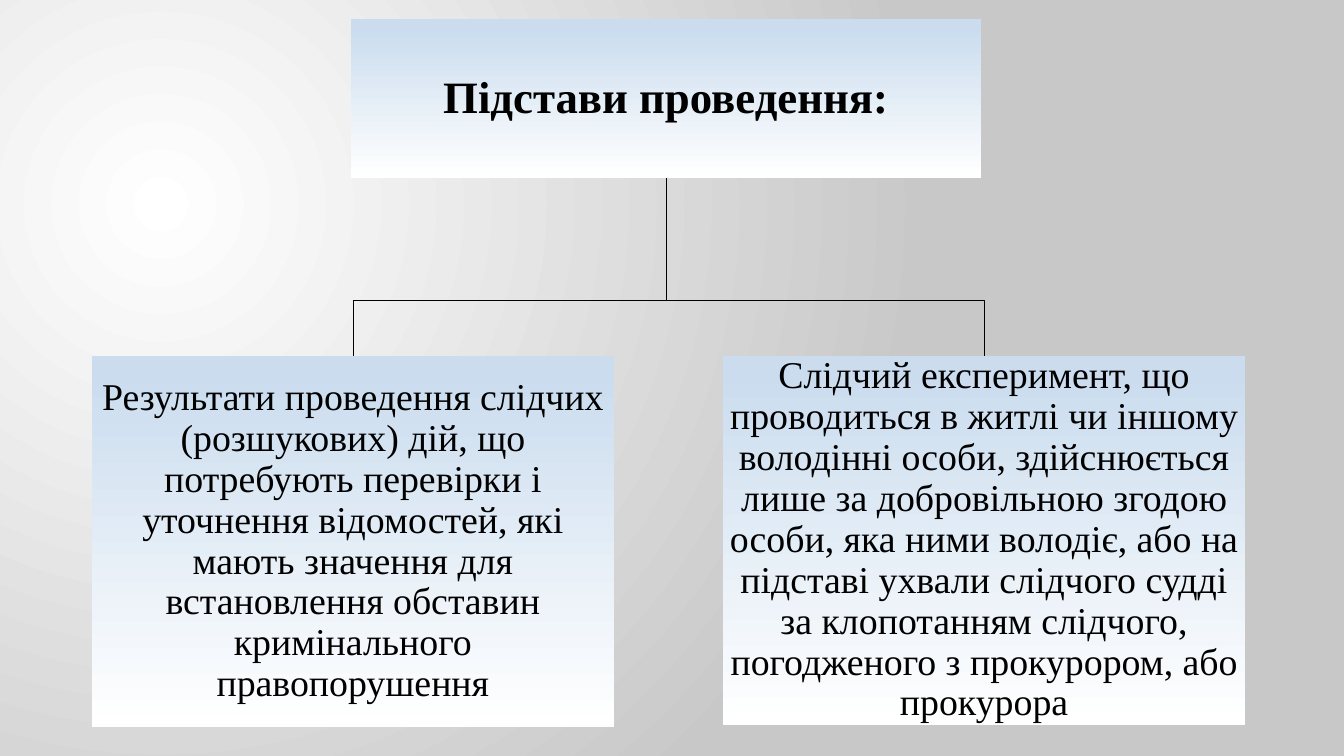
import pptx
import pptx.dml.color
import pptx.enum.shapes
import pptx.enum.text
import pptx.oxml
import pptx.oxml.ns
import pptx.util

Inches = pptx.util.Inches
RGBColor = pptx.dml.color.RGBColor

BLACK = RGBColor(0, 0, 0)
WHITE = RGBColor(255, 255, 255)
GREY = RGBColor(0xC8, 0xC8, 0xC8)
PALE_BLUE = RGBColor(0xCA, 0xDC, 0xEE)
FONT = "Times New Roman"

HEADING = "Підстави проведення:"
GROUNDS = [
    ("Результати проведення слідчих (розшукових) дій, що потребують перевірки "
     "і уточнення відомостей, які мають значення для встановлення обставин "
     "кримінального правопорушення", (0.91, 3.53, 5.18, 3.68)),
    ("Слідчий експеримент, що проводиться в житлі чи іншому володінні особи, "
     "здійснюється лише за добровільною згодою особи, яка ними володіє, або на "
     "підставі ухвали слідчого судді за клопотанням слідчого, погодженого з "
     "прокурором, або прокурора", (7.17, 3.53, 5.18, 3.66)),
]
HEADING_BOX = (3.48, 0.19, 6.25, 1.58)
BRANCH_DROP = 0.55


def set_gradient(fill, start, end, first=0.0):
    fill.gradient()
    for stop, color, position in zip(fill.gradient_stops, (start, end), (first, 1.0)):
        stop.color.rgb = color
        stop.position = position


def set_background(s):
    fill = s.background.fill
    set_gradient(fill, WHITE, GREY)
    qn = pptx.oxml.ns.qn
    lin = next(s.background._cSld.iter(qn("a:lin")))
    radial = pptx.oxml.parse_xml(
        '<a:path xmlns:a="http://schemas.openxmlformats.org/drawingml/2006/main" path="circle">'
        '<a:fillToRect l="50000" t="55000" r="125000" b="100000"/></a:path>')
    lin.getparent().replace(lin, radial)


def write_text(sp, text, size=27, bold=False, color=BLACK):
    tf = sp.text_frame
    tf.word_wrap = True
    tf.auto_size = pptx.enum.text.MSO_AUTO_SIZE.NONE
    tf.vertical_anchor = pptx.enum.text.MSO_ANCHOR.MIDDLE
    tf.margin_left = tf.margin_right = tf.margin_top = tf.margin_bottom = Inches(0.02)
    p = tf.paragraphs[0]
    p.alignment = pptx.enum.text.PP_ALIGN.CENTER
    p.line_spacing = 0.9
    r = p.add_run()
    r.text = text
    r.font.name = FONT
    r.font.size = pptx.util.Pt(size)
    r.font.bold = bold
    r.font.color.rgb = color


def format_panel(sp, box, text, **text_format):
    sp.left, sp.top, sp.width, sp.height = map(Inches, box)
    set_gradient(sp.fill, PALE_BLUE, WHITE, first=0.04)
    sp.fill.gradient_angle = 270
    sp.line.fill.background()
    write_text(sp, text, **text_format)


def add_branch(s, parent_box, child_box):
    left, top, width, height = parent_box
    start_x, start_y = left + width / 2, top + height
    end_x, end_y = child_box[0] + child_box[2] / 2, child_box[1]
    bend_y = end_y - BRANCH_DROP
    builder = s.shapes.build_freeform(Inches(start_x), Inches(start_y))
    points = [(start_x, bend_y), (end_x, bend_y), (end_x, end_y)]
    builder.add_line_segments([(Inches(x), Inches(y)) for x, y in points], close=False)
    sp = builder.convert_to_shape()
    sp.shadow.inherit = False
    sp.fill.background()
    sp.line.color.rgb = BLACK
    sp.line.width = pptx.util.Pt(0.5)


def add_ground(s, box, text):
    sp = s.shapes.add_shape(pptx.enum.shapes.MSO_SHAPE.RECTANGLE, *map(Inches, box))
    sp.shadow.inherit = False
    format_panel(sp, box, text)


def build_grounds_slide(prs):
    s = prs.slides.add_slide(prs.slide_layouts[5])
    set_background(s)
    format_panel(s.shapes.title, HEADING_BOX, HEADING, size=32, bold=True)
    for text, box in GROUNDS:
        add_branch(s, HEADING_BOX, box)
        add_ground(s, box, text)


def main():
    prs = pptx.Presentation()
    prs.slide_width, prs.slide_height = Inches(13.33), Inches(7.5)
    build_grounds_slide(prs)
    prs.save("out.pptx")


if __name__ == "__main__":
    main()
